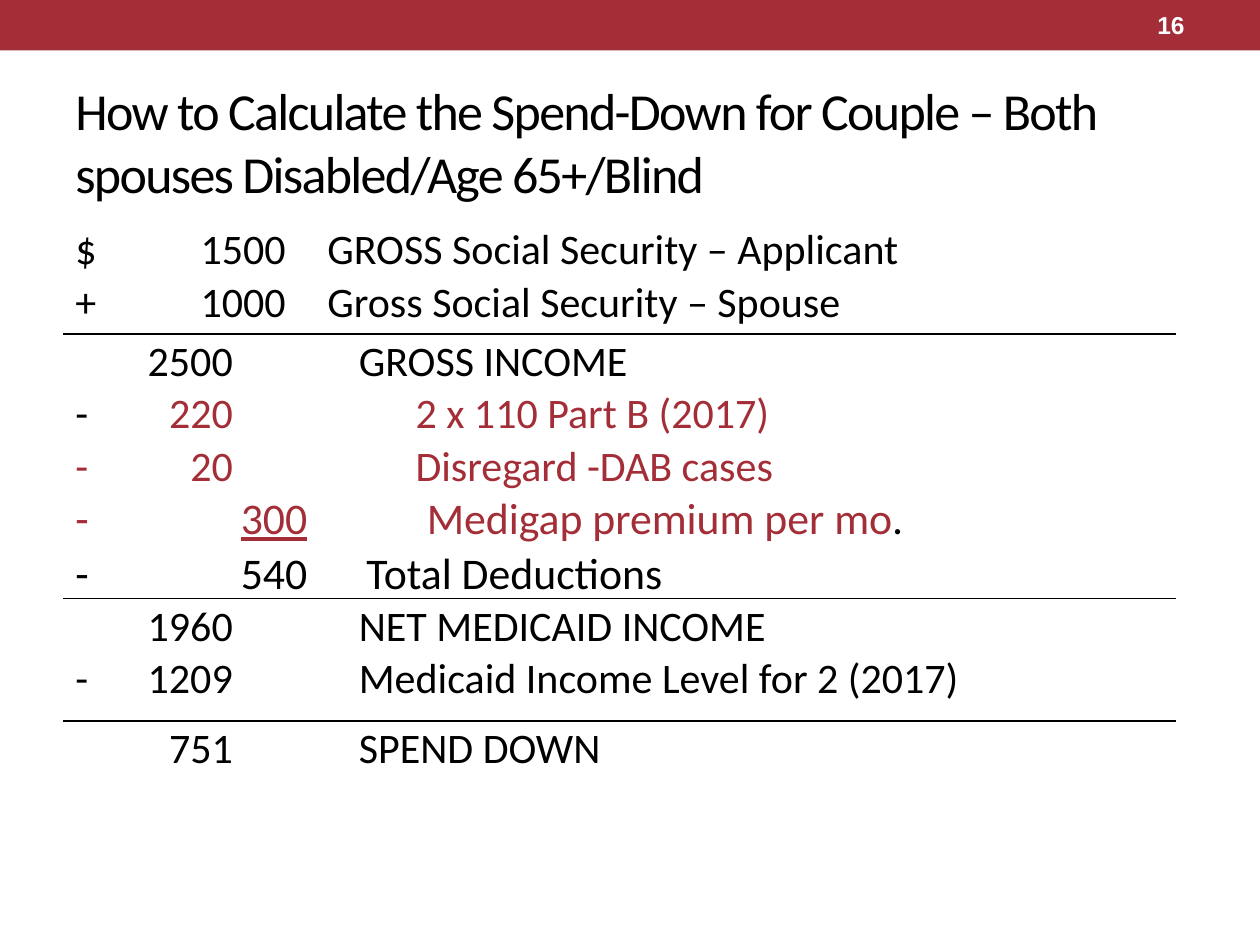
from pptx import Presentation
from pptx.dml.color import RGBColor
from pptx.enum.shapes import MSO_CONNECTOR, MSO_SHAPE
from pptx.enum.text import MSO_ANCHOR, PP_ALIGN
from pptx.oxml.ns import qn
from pptx.util import Inches, Pt
from lxml.etree import SubElement

INK = {"red": "A32E37", "black": "000000", "white": "FFFFFF"}
WIDE, HIGH = 10, 7.5
LEFT, SPAN, RULE = 0.05 * WIDE, 0.9 * WIDE, 0.883 * WIDE
MAIN, LATE, DEEP = (1.25, 2.25), (1.67, 2), (1.25, 2.7)
BODY = {"name": "Calibri", "size": Pt(24)}
LARGE = {"name": "Calibri", "size": Pt(25)}

INCOME = [
    (LATE, BODY, [("$\t1500\tGROSS Social Security – Applicant", "black")]),
    (LATE, BODY, [("+\t1000\tGross Social Security – Spouse", "black")]),
]
COSTS = [
    (MAIN, BODY, [("\t2500\tGROSS INCOME", "black")]),
    (DEEP, BODY, [("-\t", "black"), ("220\t2 x 110 Part B (2017)", "red")]),
    (DEEP, BODY, [("-\t20\tDisregard -DAB cases", "red")]),
    ((1.84, 2.79), LARGE, [("-\t", "red"), ("300", "red", True),
                           ("\tMedigap premium per mo", "red"), (".", "black")]),
    ((1.84, 2.31), LARGE, [("-\t540\tTotal Deductions", "black")]),
]
NET = [
    (MAIN, BODY, [("\t1960\tNET MEDICAID INCOME", "black")]),
    (MAIN, BODY, [("-\t1209\tMedicaid Income Level for 2 (2017)", "black")]),
]
RESULT = [(MAIN, BODY, [("\t751\tSPEND DOWN", "black")])]


def style(font, look, ink):
    for key, value in look.items():
        setattr(font, key, value)
    font.color.rgb = RGBColor.from_string(INK[ink])


def frame(slide, box, anchor):
    text = slide.shapes.add_textbox(*map(Inches, box)).text_frame
    text.word_wrap = True
    text.vertical_anchor = anchor
    return text


def write(para, words, look, ink):
    run = para.add_run()
    run.text = words
    style(run.font, look, ink)
    return run


def header(slide, box, number):
    x, y, w, h = box
    bar = slide.shapes.add_shape(MSO_SHAPE.RECTANGLE, *map(Inches, box))
    bar.shadow.inherit = False
    bar.fill.solid()
    bar.fill.fore_color.rgb = RGBColor.from_string(INK["red"])
    bar.line.fill.background()
    spot = (x + 0.833 * w, y + 0.05 * h, 0.117 * w, 0.9 * h)
    para = frame(slide, spot, MSO_ANCHOR.MIDDLE).paragraphs[0]
    para.alignment = PP_ALIGN.RIGHT
    write(para, number, {"name": "Arial", "size": Pt(14), "bold": True}, "white")


def title(slide, box, words):
    para = frame(slide, box, MSO_ANCHOR.MIDDLE).paragraphs[0]
    look = {"name": "Calibri", "size": Pt(29.7)}
    run = write(para, words, look, "black")
    run.font._element.set("spc", "-100")


def tabs(para, stops):
    holder = SubElement(para._p.get_or_add_pPr(), qn("a:tabLst"))
    for stop, align in zip(stops, ("r", "l")):
        SubElement(holder, qn("a:tab"), pos=str(Inches(stop)), algn=align)


def ledger(slide, box, rows, gap=4):
    text = frame(slide, box, MSO_ANCHOR.TOP)
    for i, (stops, look, parts) in enumerate(rows):
        para = text.add_paragraph() if i else text.paragraphs[0]
        tabs(para, stops)
        para.line_spacing = 0.9
        para.space_before = Pt(gap if i else 0)
        for words, ink, *under in parts:
            run = write(para, words, look, ink)
            if under:
                run.font.underline = True


def rule(slide, x, y, w):
    ends = map(Inches, (x, y, x + w, y))
    line = slide.shapes.add_connector(MSO_CONNECTOR.STRAIGHT, *ends)
    line.line.width = Pt(1)
    line.line.color.rgb = RGBColor.from_string(INK["black"])
    SubElement(line._element.spPr, qn("a:effectLst"))


def main():
    deck = Presentation()
    deck.slide_width, deck.slide_height = Inches(WIDE), Inches(HIGH)
    slide = deck.slides.add_slide(deck.slide_layouts[6])
    header(slide, (0, 0, WIDE, 0.4), "16")
    title(slide, (LEFT, 0.58, SPAN, 1.08),
          "How to Calculate the Spend-Down for Couple – Both "
          "spouses Disabled/Age 65+/Blind")
    ledger(slide, (LEFT, 1.76, SPAN, 0.91), INCOME, 4.8)
    blocks = [(2.65, 2.16, COSTS), (4.75, 0.88, NET), (5.72, 0.47, RESULT)]
    for top, tall, rows in blocks:
        rule(slide, LEFT, top, RULE)
        ledger(slide, (LEFT, top, SPAN, tall), rows)
    deck.save("out.pptx")


if __name__ == "__main__":
    main()
